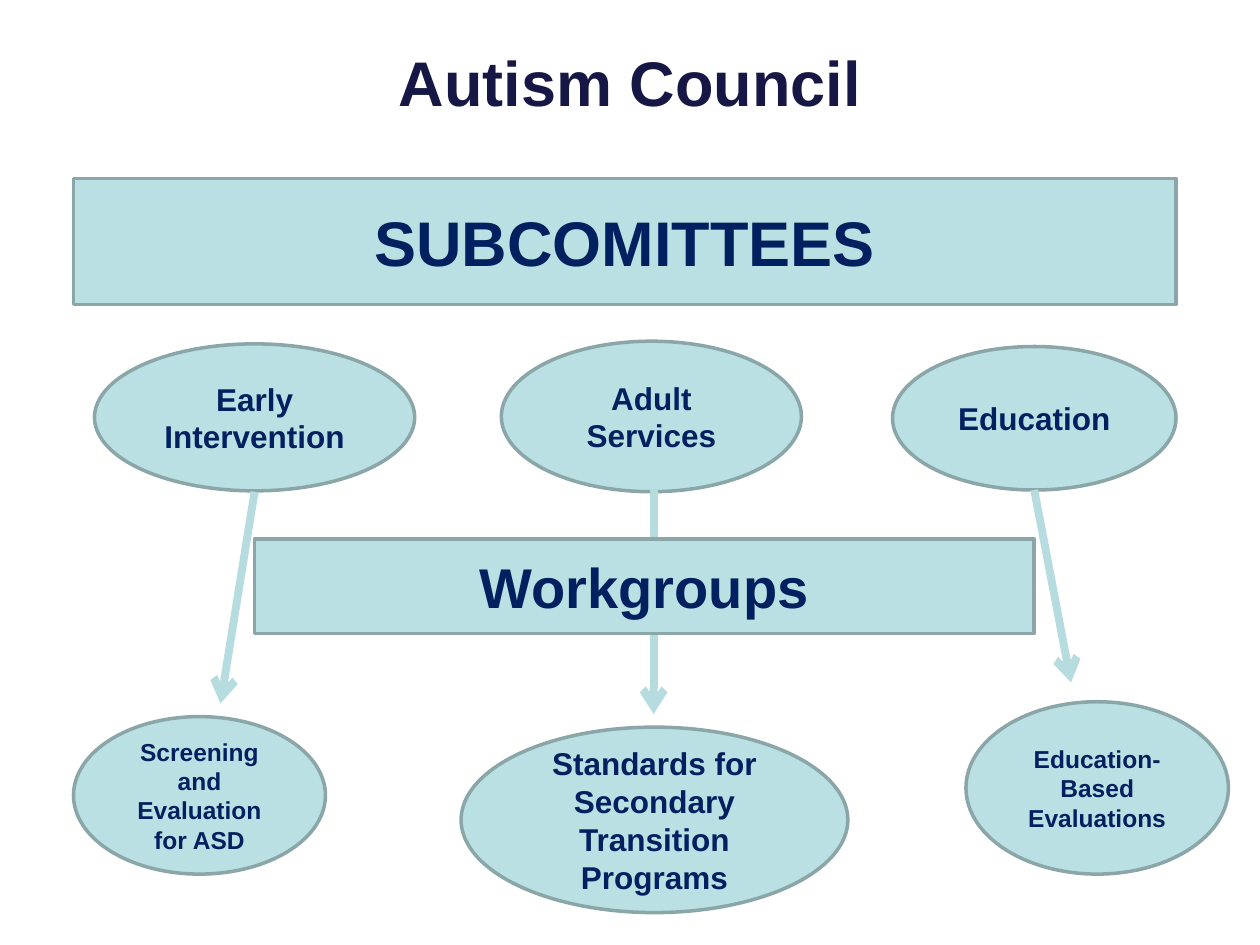
from lxml.etree import SubElement
from pptx import Presentation
from pptx.dml.color import RGBColor
from pptx.enum.shapes import MSO_CONNECTOR, MSO_SHAPE
from pptx.enum.text import MSO_ANCHOR, PP_ALIGN
from pptx.oxml.ns import qn
from pptx.util import Pt

COLORS = {"title": "171745", "text": "002060", "fill": "BBE0E3",
          "outline": "8AA6A8", "arrow": "B6DCDF"}


def color(name):
    """Return the named colour."""
    return RGBColor.from_string(COLORS[name])


def write(frame, wording, size, ink):
    """Write one centred bold paragraph."""
    frame.word_wrap = True
    paragraph = frame.paragraphs[0]
    paragraph.alignment = PP_ALIGN.CENTER
    run = paragraph.add_run()
    run.text = wording
    run.font.name = "Arial"
    run.font.size = Pt(size)
    run.font.bold = True
    run.font.color.rgb = color(ink)


def add_node(slide, kind, origin, place, wording, size):
    """Add a labelled shape, placed relative to the origin."""
    left, top, width, height = place
    node = slide.shapes.add_shape(kind, Pt(origin[0] + left), Pt(origin[1] + top),
                                  Pt(width), Pt(height))
    node.shadow.inherit = False
    node.fill.solid()
    node.fill.fore_color.rgb = color("fill")
    node.line.color.rgb = color("outline")
    node.line.width = Pt(2)
    node.text_frame.vertical_anchor = MSO_ANCHOR.MIDDLE
    write(node.text_frame, wording, size, "text")


def add_arrow(slide, origin, start, end):
    """Add a thick arrow, placed relative to the origin."""
    x, y = origin
    arrow = slide.shapes.add_connector(
        MSO_CONNECTOR.STRAIGHT, Pt(x + start[0]), Pt(y + start[1]),
        Pt(x + end[0]), Pt(y + end[1]))
    arrow.line.color.rgb = color("arrow")
    arrow.line.width = Pt(4.5)
    SubElement(arrow.line._get_or_add_ln(), qn("a:tailEnd"), type="arrow")
    SubElement(arrow._element.spPr, qn("a:effectLst"))


def add_title(slide, left, top, width, height):
    """Add the slide title."""
    title = slide.shapes.add_textbox(Pt(left), Pt(top), Pt(width), Pt(height))
    write(title.text_frame, "Autism Council", 36, "title")


def add_subcommittees(slide, left, top, width):
    """Add the subcommittee banner and its three ellipses."""
    origin = left, top
    add_node(slide, MSO_SHAPE.RECTANGLE, origin, (0, 0, width, 72), "SUBCOMITTEES", 36)
    for place, name in (
        ((12, 94.5, 183, 84), "Early Intervention"),
        ((244.5, 93, 171.5, 86), "Adult Services"),
        ((width - 162, 96, 162, 82), "Education"),
    ):
        add_node(slide, MSO_SHAPE.OVAL, origin, place, name, 18)


def add_workgroups(slide, left, top):
    """Add the arrows, the workgroup ellipses and the workgroup banner."""
    origin = left, top
    for start, end, place, name, size in (
        ((103.5, 1), (84, 122), (0, 129.5, 144, 90),
         "Screening and Evaluation for ASD", 14),
        ((331.5, 0), (331.5, 128), (221.5, 135.5, 221, 106),
         "Standards for Secondary Transition Programs", 18),
        ((549, 0), (570, 110), (510, 121, 150, 98.5),
         "Education-Based Evaluations", 14),
    ):
        add_arrow(slide, origin, start, end)
        add_node(slide, MSO_SHAPE.OVAL, origin, place, name, size)
    add_node(slide, MSO_SHAPE.RECTANGLE, origin, (103.5, 28, 445.5, 54), "Workgroups", 32)


def main():
    """Build and save the slide."""
    deck = Presentation()
    deck.slide_width, deck.slide_height = Pt(720), Pt(540)
    slide = deck.slides.add_slide(deck.slide_layouts[6])
    add_title(slide, 36, 21.6, 648, 62.6)
    add_subcommittees(slide, 42, 102, 630)
    add_workgroups(slide, 42, 280)
    deck.save("out.pptx")


if __name__ == "__main__":
    main()
